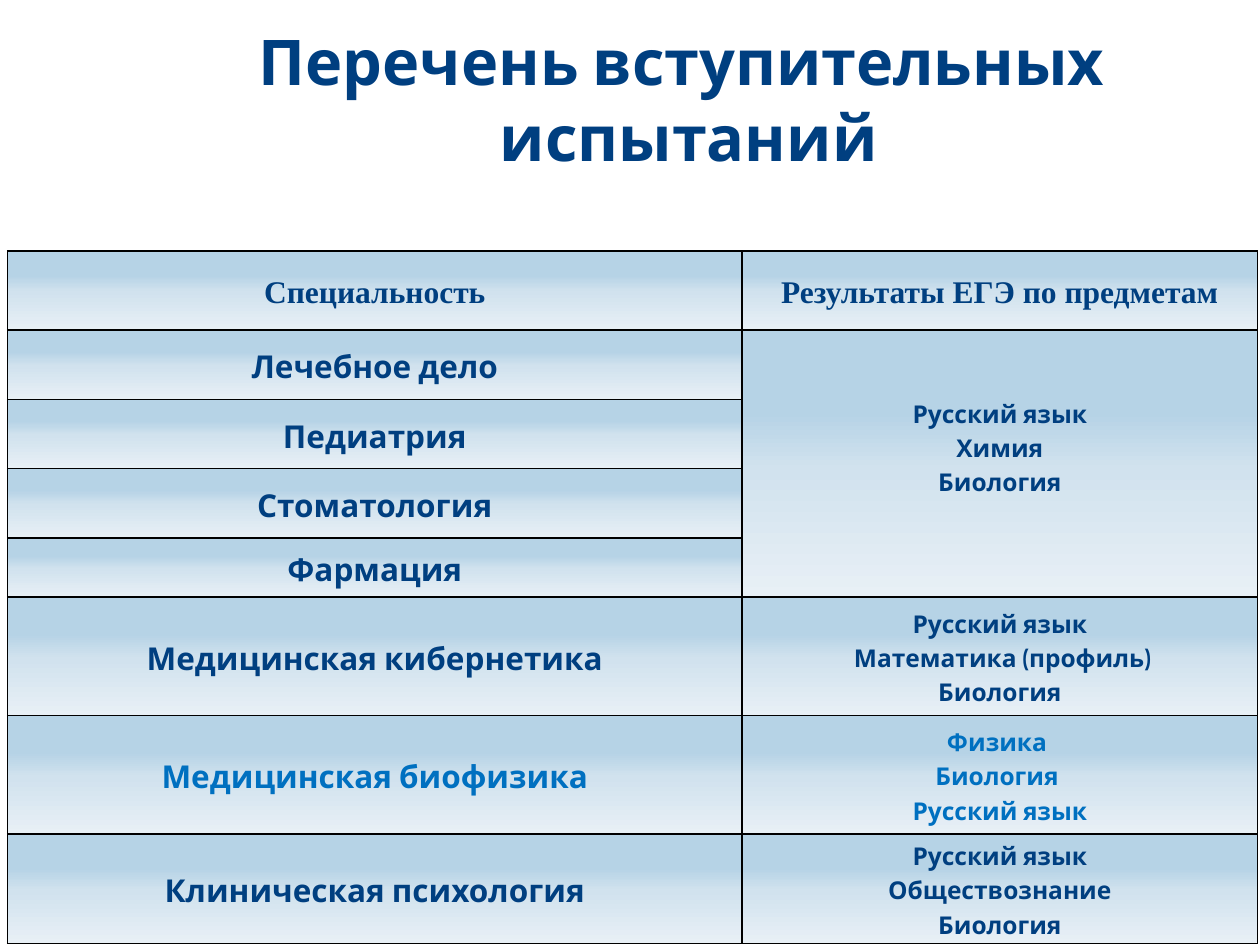
from lxml import etree
from pptx import Presentation
from pptx import util as u
from pptx.dml.color import RGBColor
from pptx.enum import text
from pptx.oxml.ns import qn

NAVY = RGBColor(0x00, 0x3F, 0x80)
BLUE = RGBColor(0x00, 0x70, 0xC0)
BLACK = RGBColor(0x00, 0x00, 0x00)
GRADIENT = [
    (31, RGBColor(0xB6, 0xD3, 0xE6)),
    (52, RGBColor(0xD1, 0xE2, 0xEE)),
    (100, RGBColor(0xE8, 0xF0, 0xF6)),
]
BODY_FONT = "Cabin"
HEADER_FONT = "Times New Roman"
COLUMN_WIDTHS = [5.83, 4.09]
LINE_HEIGHT = 0.27

HEADERS = ["Специальность", "Результаты ЕГЭ по предметам"]
SPECIALTIES = [
    ("Лечебное дело", 0.55, NAVY),
    ("Педиатрия", 0.55, NAVY),
    ("Стоматология", 0.55, NAVY),
    ("Фармация", 0.47, NAVY),
    ("Медицинская кибернетика", 0.94, NAVY),
    ("Медицинская биофизика", 0.94, BLUE),
    ("Клиническая психология", 0.87, NAVY),
]
EXAMS = {
    1: ["Русский язык", "Химия", "Биология"],
    5: ["Русский язык", " Математика (профиль)", "Биология"],
    6: ["Физика ", "Биология ", "Русский язык"],
    7: ["Русский язык", "Обществознание", "Биология"],
}
SHARED_ROWS = (1, 4)


def write_lines(frame, lines, size, color, font=BODY_FONT, spacing=1.0):
    for index, line in enumerate(lines):
        para = frame.add_paragraph() if index else frame.paragraphs[0]
        para.text = line
        para.alignment = text.PP_ALIGN.CENTER
        para.line_spacing = spacing
        para.font.name = font
        para.font.size = u.Pt(size)
        para.font.bold = True
        para.font.color.rgb = color


def style_cell(cell):
    cell.vertical_anchor = text.MSO_ANCHOR.MIDDLE
    cell.margin_left = cell.margin_right = u.Inches(0.04)
    cell.margin_top = cell.margin_bottom = 0
    properties = cell._tc.get_or_add_tcPr()
    for side in ("a:lnL", "a:lnR", "a:lnT", "a:lnB"):
        border = etree.SubElement(properties, qn(side), w=str(u.Pt(1)))
        solid = etree.SubElement(border, qn("a:solidFill"))
        etree.SubElement(solid, qn("a:srgbClr"), val=str(BLACK))
    gradient = etree.SubElement(properties, qn("a:gradFill"), rotWithShape="1")
    stops = etree.SubElement(gradient, qn("a:gsLst"))
    for percent, color in GRADIENT:
        stop = etree.SubElement(stops, qn("a:gs"), pos=str(percent * 1000))
        etree.SubElement(stop, qn("a:srgbClr"), val=str(color))
    etree.SubElement(gradient, qn("a:lin"), ang="5400000", scaled="0")


def add_title(page, left, top, width, height):
    title = page.shapes.title
    title.left, title.top = u.Inches(left), u.Inches(top)
    title.width, title.height = u.Inches(width), u.Inches(height)
    frame = title.text_frame
    frame.word_wrap = True
    frame.auto_size = text.MSO_AUTO_SIZE.SHAPE_TO_FIT_TEXT
    frame.vertical_anchor = text.MSO_ANCHOR.TOP
    write_lines(frame, ["Перечень вступительных", " испытаний"], 36, NAVY)


def add_exam_table(page, left, top, width, height):
    table = page.shapes.add_table(
        len(SPECIALTIES) + 1, len(HEADERS),
        u.Inches(left), u.Inches(top), u.Inches(width), u.Inches(height),
    ).table
    for column, column_width in zip(table.columns, COLUMN_WIDTHS):
        column.width = u.Inches(column_width)
    row_heights = [0.63] + [row_height for _, row_height, _ in SPECIALTIES]
    for row, row_height in zip(table.rows, row_heights):
        row.height = u.Inches(row_height)
    for cell in table.iter_cells():
        style_cell(cell)

    for column, header in enumerate(HEADERS):
        frame = table.cell(0, column).text_frame
        write_lines(frame, [header], 18, NAVY, HEADER_FONT, 1.15)
    for row, (name, _, color) in enumerate(SPECIALTIES, start=1):
        write_lines(table.cell(row, 0).text_frame, [name], 18, color, spacing=1.15)
        if row in EXAMS:
            frame = table.cell(row, 1).text_frame
            write_lines(frame, EXAMS[row], 14, color, spacing=1.15)

    first, last = SHARED_ROWS
    shared = table.cell(first, 1)
    shared.merge(table.cell(last, 1))
    shared.margin_bottom = u.Inches(LINE_HEIGHT)


def main():
    deck = Presentation()
    deck.slide_width, deck.slide_height = u.Inches(10), u.Inches(7.5)
    page = deck.slides.add_slide(deck.slide_layouts.get_by_name("Title Only"))
    add_exam_table(page, 0.06, 1.99, 9.92, 5.5)
    add_title(page, 1.14, 0.13, 8.54, 1.31)
    deck.save("out.pptx")


if __name__ == "__main__":
    main()
